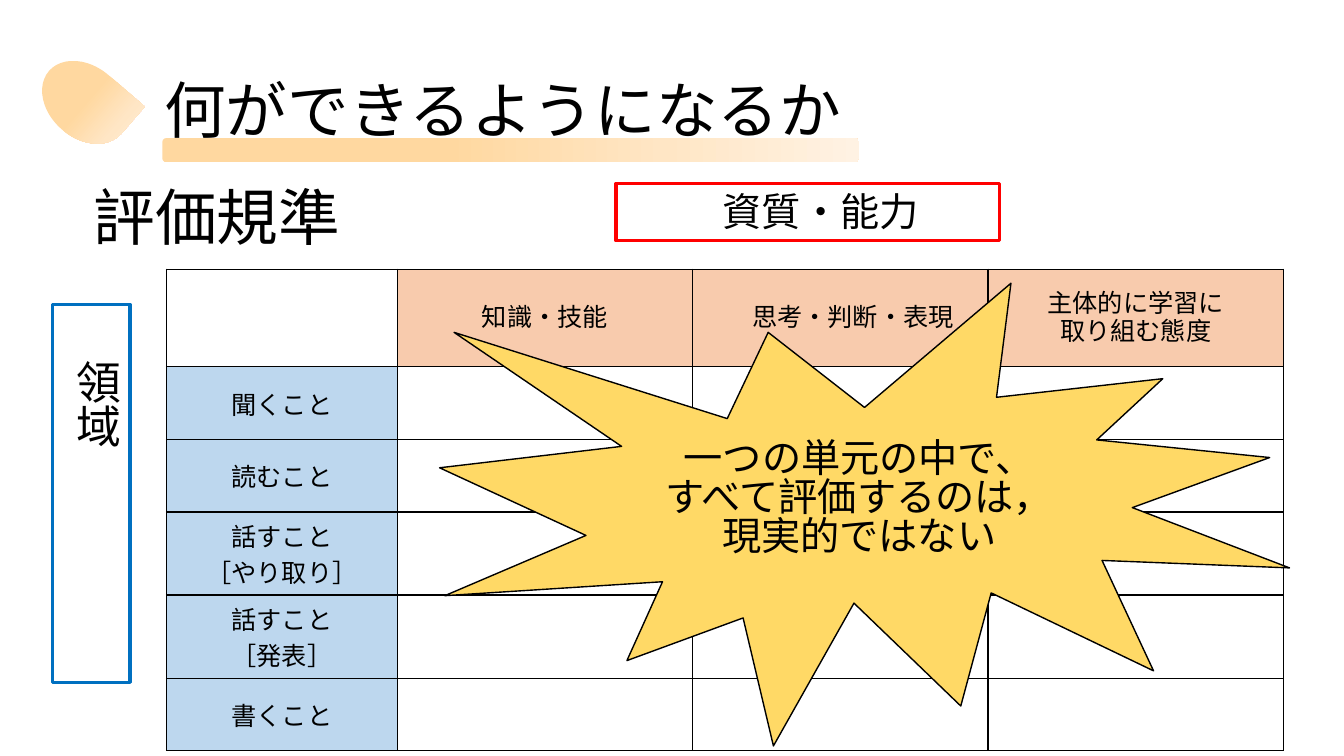
import pptx
import pptx.util
import pptx.dml.color
import pptx.enum.shapes
import pptx.enum.text
import pptx.oxml.ns
from lxml import etree

Inches, Pt = pptx.util.Inches, pptx.util.Pt
RGB = pptx.dml.color.RGBColor.from_string
SHAPE = pptx.enum.shapes.MSO_SHAPE
ALIGN = pptx.enum.text.PP_ALIGN
ANCHOR = pptx.enum.text.MSO_ANCHOR
AUTO = pptx.enum.text.MSO_AUTO_SIZE
qn = pptx.oxml.ns.qn

HEADING = "何ができるようになるか"
SUBHEADING = "評価規準"
ABILITY = "資質・能力"
AREA = "領域"
ASPECTS = [["知識・技能"], ["思考・判断・表現"], ["主体的に学習に", "取り組む態度"]]
SKILLS = [["聞くこと"], ["読むこと"], ["話すこと", "［やり取り］"],
          ["話すこと", "［発表］"], ["書くこと"]]
MESSAGE = ["一つの単元の中で、", "すべて評価するのは，", "現実的ではない"]

THEME = {
    "font": "Noto Sans CJK JP", "header_font": "Arial",
    "title": 44, "area": 32, "body": 28, "cell": 18,
    "text": "000000", "white": "FFFFFF",
    "aspect": "F8CBAD", "skill": "BDD7EE", "burst": "FFD966",
    "ability_line": "FF0000", "area_line": "0070C0",
    "fade": ["FFD8A0", "FFE6C5", "FFF2E3"],
}


def write(tf, lines, size, align=ALIGN.LEFT, font=THEME["font"], spacing=None):
    for i, line in enumerate(lines):
        p = tf.paragraphs[0] if i == 0 else tf.add_paragraph()
        p.text = line
        p.alignment = align
        p.line_spacing = spacing
        p.font.size = Pt(size)
        p.font.color.rgb = RGB(THEME["text"])
        p.font.name = font
        latin = next(p._p.iter(qn("a:latin")))
        east_asian = etree.Element(qn("a:ea"), typeface=font)
        latin.addnext(east_asian)


def add_text(s, box, lines, size, **style):
    tf = s.shapes.add_textbox(*map(Inches, box)).text_frame
    tf.word_wrap = True
    write(tf, lines, size, **style)
    return tf


def add_shape(s, kind, box, fill=None, line=None, width=1):
    sp = s.shapes.add_shape(kind, *map(Inches, box))
    sp.shadow.inherit = False
    if fill:
        sp.fill.solid()
        sp.fill.fore_color.rgb = RGB(fill)
    else:
        sp.fill.background()
    if line:
        sp.line.color.rgb = RGB(line)
        sp.line.width = Pt(width)
    else:
        sp.line.fill.background()
    return sp


def fade(sp, stops):
    """Fill with the theme's fading colours at the given percentages."""
    sp.fill.gradient()
    sp.fill.gradient_angle = 0
    stop_list = next(sp._element.iter(qn("a:gsLst")))
    for old in list(stop_list):
        stop_list.remove(old)
    for percent, color in zip(stops, THEME["fade"]):
        gs = etree.SubElement(stop_list, qn("a:gs"), pos=str(percent * 1000))
        etree.SubElement(gs, qn("a:srgbClr"), val=color)


def add_borders(cell):
    props = cell._tc.get_or_add_tcPr()
    for i, side in enumerate(("lnL", "lnR", "lnT", "lnB")):
        ln = etree.Element(qn("a:" + side), w=str(Pt(1)))
        solid = etree.SubElement(ln, qn("a:solidFill"))
        etree.SubElement(solid, qn("a:srgbClr"), val=THEME["text"])
        props.insert(i, ln)


def add_criteria_table(s):
    widths = [2.29] + [2.93] * len(ASPECTS)
    heights = [0.97] + [0.72] * len(SKILLS)
    box = (1.65, 2.67, sum(widths), sum(heights))
    table = s.shapes.add_table(len(heights), len(widths), *map(Inches, box)).table
    for col, width in zip(table.columns, widths):
        col.width = Inches(width)
    for row, height in zip(table.rows, heights):
        row.height = Inches(height)
    for r in range(len(heights)):
        for c in range(len(widths)):
            cell = table.cell(r, c)
            lines, color, font = [], THEME["white"], THEME["font"]
            if r == 0 and c > 0:
                lines, color, font = ASPECTS[c - 1], THEME["aspect"], THEME["header_font"]
            elif c == 0 and r > 0:
                lines, color = SKILLS[r - 1], THEME["skill"]
            cell.fill.solid()
            cell.fill.fore_color.rgb = RGB(color)
            cell.vertical_anchor = ANCHOR.MIDDLE
            write(cell.text_frame, lines, THEME["cell"], align=ALIGN.CENTER, font=font)
            add_borders(cell)
    table.cell(0, 2).margin_left = Inches(0.35)


def main():
    prs = pptx.Presentation()
    prs.slide_width, prs.slide_height = Inches(13.33), Inches(7.5)
    s = prs.slides.add_slide(prs.slide_layouts[6])

    add_criteria_table(s)

    subheading = add_text(s, (0.83, 1.46, 11.5, 1.45), [SUBHEADING],
                          THEME["title"], spacing=0.9)
    heading = add_text(s, (0.92, 0.4, 7.69, 1.45), [HEADING],
                       THEME["title"], spacing=0.9)
    heading.margin_left = Inches(0.71)
    for tf in (subheading, heading):
        tf.vertical_anchor = ANCHOR.MIDDLE

    underline = add_shape(s, SHAPE.ROUNDED_RECTANGLE, (1.61, 1.37, 6.91, 0.24))
    fade(underline, (41, 72, 100))
    drop = add_shape(s, SHAPE.TEAR, (0.37, 0.66, 0.95, 0.71))
    drop.rotation = 40.9
    fade(drop, (50, 74, 100))

    burst = add_shape(s, SHAPE.EXPLOSION1, (4.36, 2.81, 8.43, 4.59),
                      THEME["burst"], THEME["text"])
    burst.text_frame.vertical_anchor = ANCHOR.MIDDLE
    burst.text_frame.word_wrap = True
    write(burst.text_frame, MESSAGE, THEME["body"], align=ALIGN.CENTER, spacing=0.83)

    add_shape(s, SHAPE.RECTANGLE, (6.11, 1.82, 3.8, 0.57),
              line=THEME["ability_line"], width=2.25)
    area = add_text(s, (0.54, 3.47, 0.74, 2.71), [AREA], THEME["area"],
                    align=ALIGN.CENTER)
    area._txBody.bodyPr.set("vert", "eaVert")
    ability = add_text(s, (7.07, 1.81, 2.8, 0.57), [ABILITY], THEME["body"])
    for tf in (area, ability):
        tf.auto_size = AUTO.SHAPE_TO_FIT_TEXT
    add_shape(s, SHAPE.RECTANGLE, (0.52, 3.02, 0.77, 3.75),
              line=THEME["area_line"], width=2.25)

    prs.save("out.pptx")


if __name__ == "__main__":
    main()
